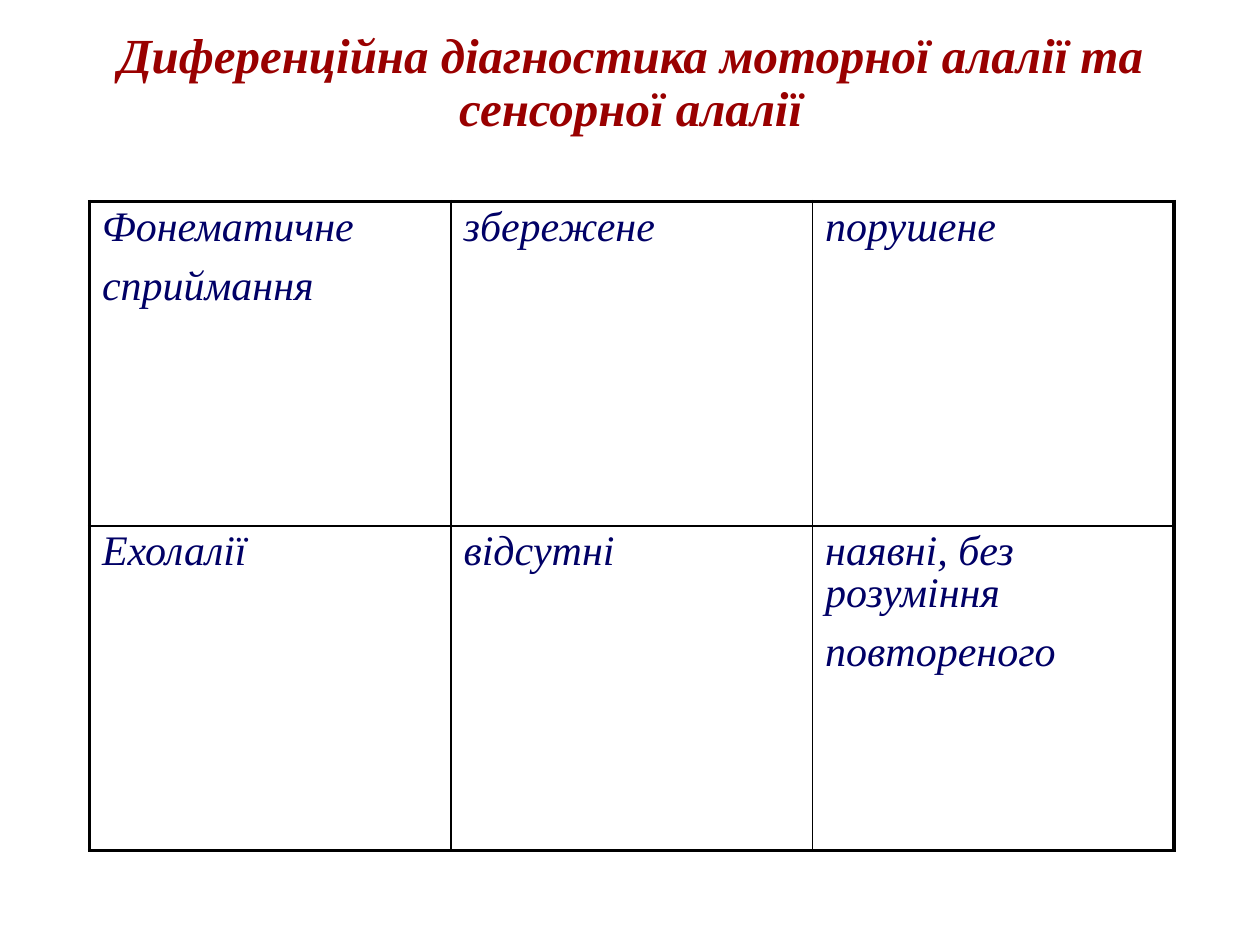
from lxml.etree import SubElement
from pptx import Presentation
from pptx.dml.color import RGBColor
from pptx.enum.text import MSO_ANCHOR, PP_ALIGN
from pptx.oxml.ns import qn
from pptx.util import Inches, Pt

WIDTH, HEIGHT = 10, 7.5
FONT = "Times New Roman"
RED, NAVY, BLACK = "990000", "000066", "000000"
OUTER, INNER = 2.25, 1

HEADING = "Диференційна діагностика моторної алалії та сенсорної алалії"
SIGNS = [
    ["Фонематичне\nсприймання", "збережене", "порушене"],
    ["Ехолалії", "відсутні", "наявні, без розуміння\nповтореного"],
]


def color(hex_code):
    return RGBColor.from_string(hex_code)


def format_paragraph(paragraph, size, hex_code, bold=False):
    paragraph.line_spacing = 0.9
    for run in paragraph.runs:
        font = run.font
        font.name, font.size = FONT, Pt(size)
        font.bold, font.italic = bold, True
        font.color.rgb = color(hex_code)


def add_heading(slide):
    heading = slide.shapes.title
    heading.left, heading.top = Inches(0.72), Inches(0.13)
    heading.width, heading.height = Inches(8.57), Inches(1.07)
    frame = heading.text_frame
    frame.text = HEADING
    frame.word_wrap = True
    frame.vertical_anchor = MSO_ANCHOR.MIDDLE
    paragraph = frame.paragraphs[0]
    paragraph.alignment = PP_ALIGN.CENTER
    format_paragraph(paragraph, 28, RED, bold=True)


def set_borders(cell, widths):
    """Draw the left, right, top and bottom borders, widths in points."""
    properties = cell._tc.get_or_add_tcPr()
    for position, (side, width) in enumerate(widths.items()):
        line = properties.makeelement(qn(f"a:ln{side}"), {"w": str(Pt(width))})
        fill = SubElement(line, qn("a:solidFill"))
        SubElement(fill, qn("a:srgbClr"), val=BLACK)
        properties.insert(position, line)


def fill_cell(cell, text):
    cell.fill.background()
    cell.text_frame.text = text
    for index, paragraph in enumerate(cell.text_frame.paragraphs):
        format_paragraph(paragraph, 24, NAVY)
        paragraph.space_before = Pt(10 if index else 0)


def add_sign_table(slide):
    rows, columns = len(SIGNS), len(SIGNS[0])
    table = slide.shapes.add_table(
        rows, columns, Inches(0.71), Inches(1.6), Inches(8.61), Inches(5.15)
    ).table
    table.first_row = table.horz_banding = False
    for r, row in enumerate(SIGNS):
        for c, text in enumerate(row):
            cell = table.cell(r, c)
            fill_cell(cell, text)
            on_edge = {"L": c == 0, "R": c == columns - 1,
                       "T": r == 0, "B": r == rows - 1}
            set_borders(cell, {side: OUTER if edge else INNER
                               for side, edge in on_edge.items()})


def main():
    deck = Presentation()
    deck.slide_width, deck.slide_height = Inches(WIDTH), Inches(HEIGHT)
    slide = deck.slides.add_slide(deck.slide_layouts[5])
    add_heading(slide)
    add_sign_table(slide)
    deck.save("out.pptx")


if __name__ == "__main__":
    main()
